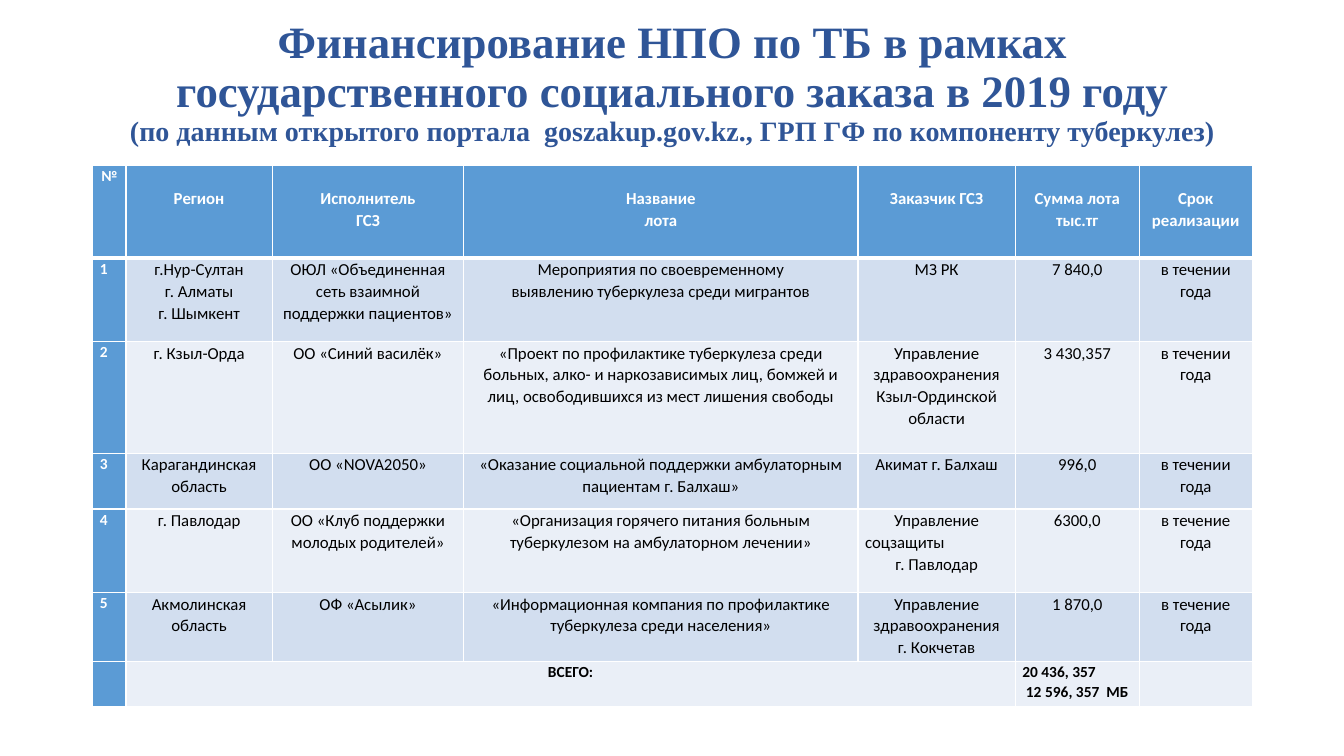
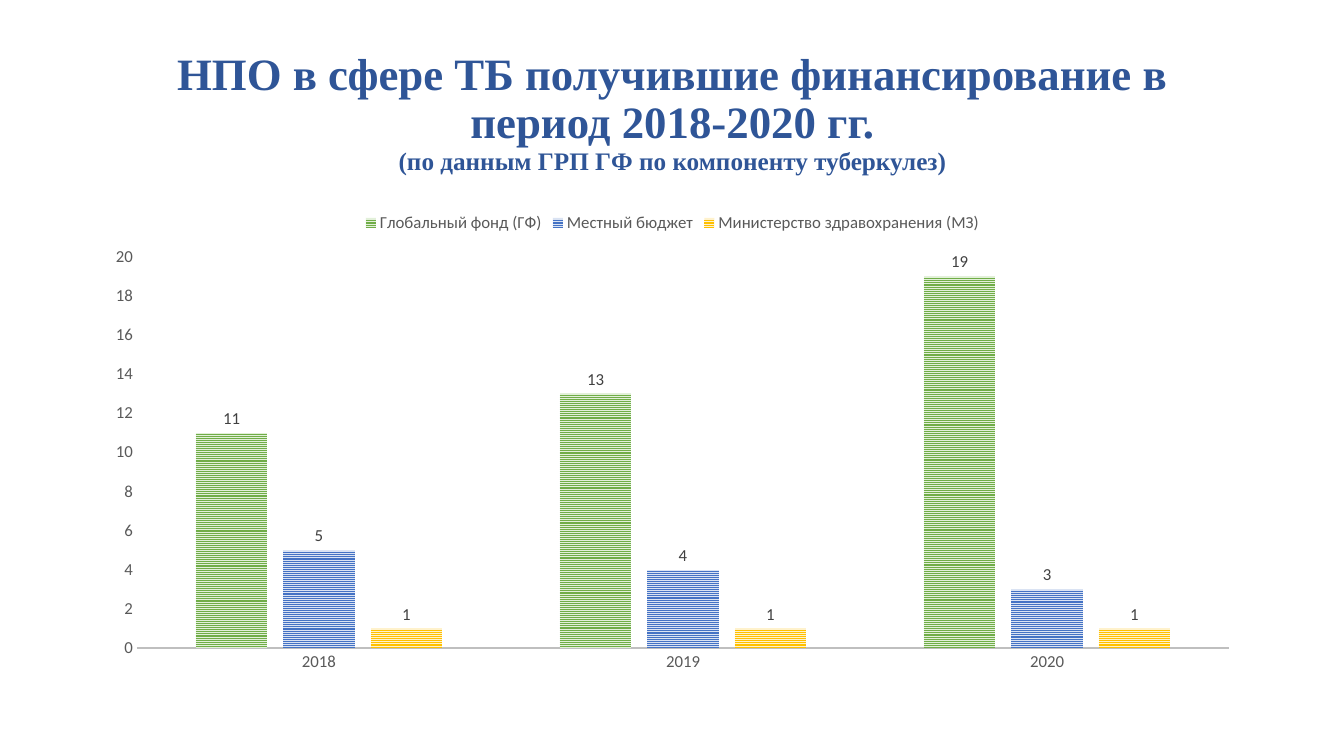
import dataclasses
import typing

import lxml.etree
import pptx
import pptx.chart.data
import pptx.dml.color
import pptx.enum.chart
import pptx.enum.dml
import pptx.enum.text
import pptx.oxml.ns
import pptx.slide
import pptx.table
import pptx.util

Inches = pptx.util.Inches
Pt = pptx.util.Pt
RGBColor = pptx.dml.color.RGBColor
Align = pptx.enum.text.PP_ALIGN

TITLE_BLUE = RGBColor(0x2F, 0x55, 0x97)
HEADER_BLUE = RGBColor(0x5B, 0x9B, 0xD5)
BAND_DARK = RGBColor(0xD2, 0xDE, 0xEF)
BAND_LIGHT = RGBColor(0xEA, 0xEF, 0xF7)
WHITE = RGBColor(0xFF, 0xFF, 0xFF)
BLACK = RGBColor(0, 0, 0)
AXIS_TEXT = RGBColor(0x59, 0x59, 0x59)
AXIS_LINE = RGBColor(0xBF, 0xBF, 0xBF)
LABEL_TEXT = RGBColor(0x40, 0x40, 0x40)
GREEN = RGBColor(0x70, 0xAD, 0x47)
PALE_GREEN = RGBColor(0xE2, 0xF0, 0xD9)
BLUE = RGBColor(0x44, 0x72, 0xC4)
PALE_BLUE = RGBColor(0xDA, 0xE3, 0xF3)
GOLD = RGBColor(0xFF, 0xC0, 0x00)
PALE_GOLD = RGBColor(0xFF, 0xF2, 0xCC)

BODY_FONT = "Calibri"
TITLE_FONT = "Times New Roman"
LEFT, WIDTH = Inches(0.92), Inches(11.5)


@dataclasses.dataclass(frozen=True)
class Title:
    heading: str
    source: str
    source_size: int
    top: float
    height: float


@dataclasses.dataclass(frozen=True)
class CellStyle:
    fill: RGBColor
    color: RGBColor = BLACK
    size: int = 12
    bold: bool = False
    align: Align = Align.CENTER
    top_margin: float = 0


@dataclasses.dataclass(frozen=True)
class Funder:
    name: str
    counts: tuple[int, ...]
    stripe: RGBColor
    ground: RGBColor


LOTS_TITLE = Title(
    "Финансирование НПО по ТБ в рамках государственного социального заказа в 2019 году",
    "(по данным открытого портала  goszakup.gov.kz., ГРП ГФ по компоненту туберкулез)",
    20, 0.14, 1.38)
FUNDERS_TITLE = Title(
    "НПО в сфере ТБ получившие финансирование в период 2018-2020 гг.",
    "(по данным ГРП ГФ по компоненту туберкулез)", 18, 0.4, 1.45)

COLUMN_WIDTHS = (0.33, 1.45, 1.9, 3.91, 1.56, 1.23, 1.12)
ROW_HEIGHTS = (0.92, 0.83, 1.11, 0.55, 0.83, 0.68, 0.45)
LOTS = (
    ("№", "Регион", "Исполнитель\nГСЗ", "Название\nлота", "Заказчик ГСЗ",
     "Сумма лота\nтыс.тг", "Срок реализации"),
    ("1", "г.Нур-Султан\nг. Алматы\nг. Шымкент",
     "ОЮЛ «Объединенная сеть взаимной поддержки пациентов»",
     "Мероприятия по своевременному\nвыявлению туберкулеза среди мигрантов",
     "МЗ РК", "7 840,0", "в течении года"),
    ("2", "г. Кзыл-Орда", "ОО «Синий василёк»",
     "«Проект по профилактике туберкулеза среди больных, алко- и наркозависимых лиц, "
     "бомжей и лиц, освободившихся из мест лишения свободы",
     "Управление здравоохранения Кзыл-Ординской области", "3 430,357", "в течении года"),
    ("3", "Карагандинская область", "ОО «NOVA2050»",
     "«Оказание социальной поддержки амбулаторным пациентам г. Балхаш»",
     "Акимат г. Балхаш", "996,0", "в течении года"),
    ("4", "г. Павлодар", "ОО «Клуб поддержки молодых родителей»",
     "«Организация горячего питания больным туберкулезом на амбулаторном лечении»",
     "Управление\nсоцзащиты\nг. Павлодар", "6300,0", "в течение года"),
    ("5", "Акмолинская область", "ОФ «Асылик»",
     "«Информационная компания по профилактике туберкулеза среди населения»",
     "Управление здравоохранения\nг. Кокчетав", "1 870,0", "в течение года"),
    ("", "ВСЕГО:", "", "", "", "20 436, 357\n12 596, 357  МБ", ""),
)
LEFT_LINES = {"соцзащиты", "20 436, 357"}
TOTAL_ROW = len(LOTS) - 1

YEARS = ("2018", "2019", "2020")
FUNDERS = (
    Funder("Глобальный фонд (ГФ)", (11, 13, 19), GREEN, PALE_GREEN),
    Funder("Местный бюджет", (5, 4, 3), BLUE, PALE_BLUE),
    Funder("Министерство здравохранения (МЗ)", (1, 1, 1), GOLD, PALE_GOLD),
)


def apply_format(target: typing.Any, values: dict[str, typing.Any]) -> None:
    for name, value in values.items():
        setattr(target, name, value)


def set_font(font: typing.Any, size: int, color: RGBColor,
             bold: bool = False, name: str = BODY_FONT) -> None:
    apply_format(font, {"size": Pt(size), "bold": bold, "name": name})
    font.color.rgb = color


def add_title(slide: pptx.slide.Slide, title: Title) -> None:
    frame = slide.shapes.add_textbox(
        LEFT, Inches(title.top), WIDTH, Inches(title.height)).text_frame
    apply_format(frame, {"word_wrap": True,
                         "vertical_anchor": pptx.enum.text.MSO_ANCHOR.MIDDLE})
    paragraph = frame.paragraphs[0]
    apply_format(paragraph, {"alignment": Align.CENTER, "line_spacing": 0.9})
    heading = paragraph.add_run()
    heading.text = title.heading
    paragraph.add_line_break()
    source = paragraph.add_run()
    source.text = title.source
    for run, size in ((heading, 32), (source, title.source_size)):
        set_font(run.font, size, TITLE_BLUE, True, TITLE_FONT)


def set_borders(cell: pptx.table._Cell, widths: dict[str, int]) -> None:
    properties = cell._tc.get_or_add_tcPr()
    for side, width in widths.items():
        line = lxml.etree.SubElement(
            properties, pptx.oxml.ns.qn(f"a:ln{side}"), w=str(Pt(width)))
        fill = lxml.etree.SubElement(line, pptx.oxml.ns.qn("a:solidFill"))
        lxml.etree.SubElement(fill, pptx.oxml.ns.qn("a:srgbClr"), val=str(WHITE))


def lot_style(row: int, column: int) -> CellStyle:
    if row == 0:
        if column == 0:
            return CellStyle(HEADER_BLUE, WHITE, 11, True)
        return CellStyle(HEADER_BLUE, WHITE, 12, True, top_margin=0.22)
    if column == 0:
        return CellStyle(HEADER_BLUE, WHITE, 11, True, Align.LEFT)
    if row == TOTAL_ROW:
        return CellStyle(BAND_LIGHT, size=11, bold=True)
    return CellStyle(BAND_DARK if row % 2 else BAND_LIGHT)


def fill_cell(cell: pptx.table._Cell, text: str, style: CellStyle) -> None:
    apply_format(cell, {"margin_left": Inches(0.07), "margin_right": Inches(0.07),
                        "margin_top": Inches(style.top_margin), "margin_bottom": 0})
    cell.fill.solid()
    cell.fill.fore_color.rgb = style.fill
    if not text:
        return
    cell.text = text
    for paragraph in cell.text_frame.paragraphs:
        align = Align.LEFT if paragraph.text in LEFT_LINES else style.align
        apply_format(paragraph, {"alignment": align, "line_spacing": 1.07})
        set_font(paragraph.runs[0].font, style.size, style.color, style.bold)


def add_lots_table(slide: pptx.slide.Slide) -> None:
    table = slide.shapes.add_table(
        len(ROW_HEIGHTS), len(COLUMN_WIDTHS), LEFT, Inches(1.64),
        WIDTH, Inches(sum(ROW_HEIGHTS))).table
    for column, width in zip(table.columns, COLUMN_WIDTHS):
        column.width = Inches(width)
    for row, height in zip(table.rows, ROW_HEIGHTS):
        row.height = Inches(height)
    for row, texts in enumerate(LOTS):
        for column, text in enumerate(texts):
            cell = table.cell(row, column)
            set_borders(cell, {"L": 1, "R": 1, "T": 3 if row == 1 else 1,
                               "B": 3 if row == 0 else 1})
            fill_cell(cell, text, lot_style(row, column))
    table.cell(TOTAL_ROW, 1).merge(table.cell(TOTAL_ROW, 4))


def add_funders_chart(slide: pptx.slide.Slide) -> None:
    counts = pptx.chart.data.CategoryChartData()
    counts.categories = YEARS
    for funder in FUNDERS:
        counts.add_series(funder.name, funder.counts)
    chart = slide.shapes.add_chart(
        pptx.enum.chart.XL_CHART_TYPE.COLUMN_CLUSTERED,
        LEFT, Inches(2), WIDTH, Inches(4.76), counts).chart
    apply_format(chart, {"has_title": False, "has_legend": True})
    set_font(chart.font, 10, BLACK)
    apply_format(chart.legend, {
        "position": pptx.enum.chart.XL_LEGEND_POSITION.TOP, "include_in_layout": False})
    set_font(chart.legend.font, 12, AXIS_TEXT)

    years, scale = chart.category_axis, chart.value_axis
    for axis in (years, scale):
        apply_format(axis, {"major_tick_mark": pptx.enum.chart.XL_TICK_MARK.NONE,
                            "minor_tick_mark": pptx.enum.chart.XL_TICK_MARK.NONE,
                            "has_major_gridlines": False})
        set_font(axis.tick_labels.font, 12, AXIS_TEXT)
    years.format.line.color.rgb = AXIS_LINE
    years.format.line.width = Pt(1.5)
    scale.format.line.fill.background()
    apply_format(scale, {"minimum_scale": 0, "maximum_scale": 20, "major_unit": 2})

    plot = chart.plots[0]
    apply_format(plot, {"gap_width": 164, "overlap": -22, "vary_by_categories": False})
    for series, funder in zip(plot.series, FUNDERS):
        fill = series.format.fill
        fill.patterned()
        fill.pattern = pptx.enum.dml.MSO_PATTERN.NARROW_HORIZONTAL
        fill.fore_color.rgb = funder.stripe
        fill.back_color.rgb = funder.ground
        series.format.line.fill.background()
        labels = series.data_labels
        apply_format(labels, {
            "show_value": True,
            "position": pptx.enum.chart.XL_LABEL_POSITION.OUTSIDE_END})
        set_font(labels.font, 12, LABEL_TEXT)


def main() -> None:
    deck = pptx.Presentation()
    apply_format(deck, {"slide_width": Inches(13.33), "slide_height": Inches(7.5)})
    for title, add_content in ((LOTS_TITLE, add_lots_table),
                               (FUNDERS_TITLE, add_funders_chart)):
        slide = deck.slides.add_slide(deck.slide_layouts[6])
        add_title(slide, title)
        add_content(slide)
    deck.save("out.pptx")


if __name__ == "__main__":
    main()
